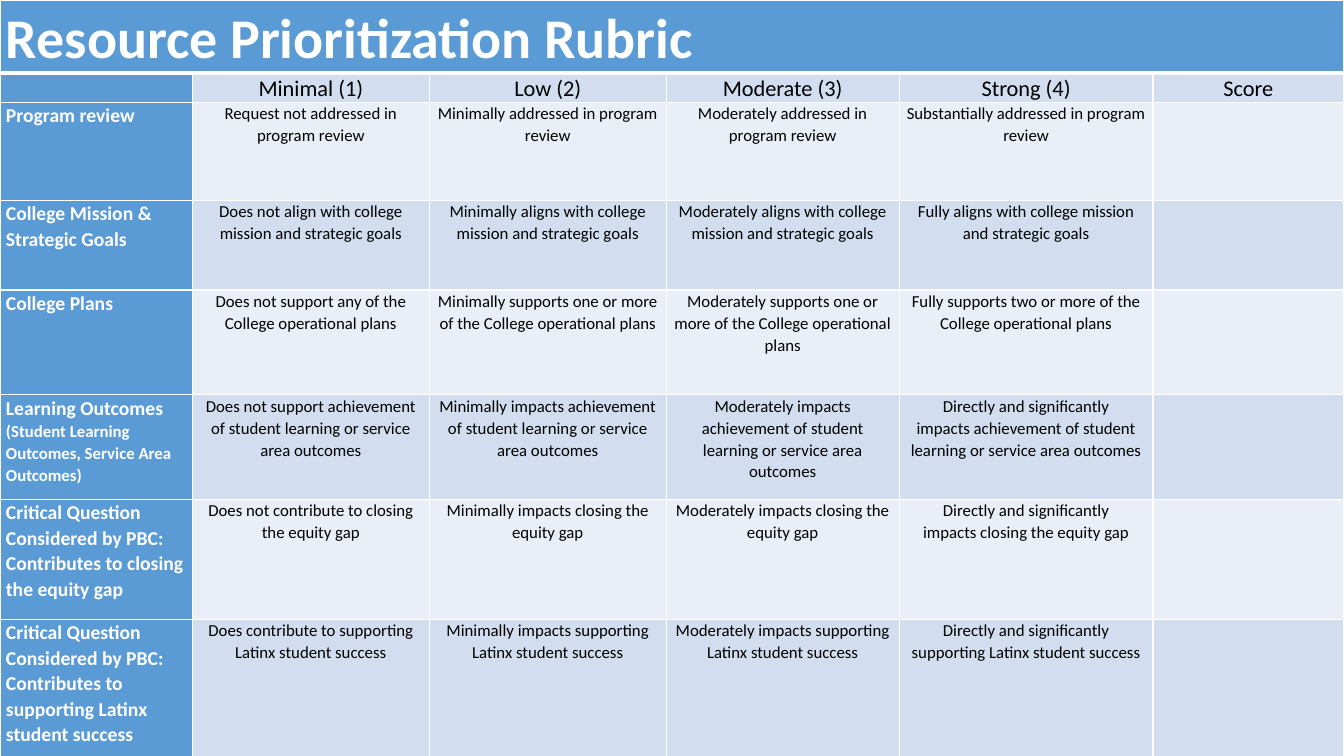
from dataclasses import dataclass

from pptx import Presentation
from pptx.dml.color import RGBColor as RGB
from pptx.enum.text import PP_ALIGN as Align
from pptx.oxml import parse_xml
from pptx.oxml.ns import nsdecls
from pptx.util import Cm, Pt


@dataclass(frozen=True)
class Theme:
    """Colours and type sizes of the rubric."""
    font: str = "Calibri"
    blue: str = "5B9BD5"
    pale: str = "EAEFF7"
    mid: str = "D2DEEF"
    white: str = "FFFFFF"
    black: str = "000000"
    title: int = 40
    head: int = 16
    label: int = 14
    body: int = 12


THEME = Theme()
WIDTHS = (4.85, 5.97, 5.97, 5.87, 6.4, 4.8)
HEIGHTS = (1.83, 0.74, 2.47, 2.26, 2.64, 2.64, 3.02, 3.99)
TITLE = "Resource Prioritization Rubric"
HEADS = ("", "Minimal (1)", "Low (2)", "Moderate (3)", "Strong (4)", "Score")
ROWS = (
    ("Program review",
     "Request not addressed in program review",
     "Minimally addressed in program review",
     "Moderately addressed in program review",
     "Substantially addressed in program review", ""),
    ("College Mission & Strategic Goals",
     "Does not align with college mission and strategic goals",
     "Minimally aligns with college mission and strategic goals",
     "Moderately aligns with college mission and strategic goals",
     "Fully aligns with college mission and strategic goals", ""),
    ("College Plans",
     "Does not support any of the College operational plans",
     "Minimally supports one or more of the College operational plans",
     "Moderately supports one or\nmore of the College operational plans",
     "Fully supports two or more of the College operational plans", ""),
    ("Learning Outcomes",
     "Does not support achievement of student learning or service area outcomes",
     "Minimally impacts achievement of student learning or service area outcomes",
     "Moderately impacts achievement of student learning or service area outcomes",
     "Directly and significantly\nimpacts achievement of student "
     "learning or service area outcomes", ""),
    ("Critical Question Considered by PBC: Contributes to closing the equity gap",
     "Does not contribute to closing the equity gap",
     "Minimally impacts closing the equity gap",
     "Moderately impacts closing the equity gap",
     "Directly and significantly\nimpacts closing the equity gap", ""),
    ("Critical Question Considered by PBC: "
     "Contributes to supporting Latinx student success",
     "Does contribute to supporting Latinx student success",
     "Minimally impacts supporting Latinx student success",
     "Moderately impacts supporting Latinx student success",
     "Directly and significantly\nsupporting Latinx student success", ""),
)
NOTES = {"Learning Outcomes": " (Student Learning Outcomes, Service Area Outcomes)"}


def edge(cell, base=1):
    """Draw white cell borders, with the bottom one in its own width."""
    props = cell._tc.get_or_add_tcPr()
    for side, width in zip("LRTB", (1, 1, 1, base)):
        props.append(parse_xml(
            f'<a:ln{side} {nsdecls("a")} w="{Pt(width)}"><a:solidFill>'
            f'<a:srgbClr val="{THEME.white}"/></a:solidFill></a:ln{side}>'))


def paint(cell, fill, base=1):
    """Give a cell its borders, fill and margins."""
    edge(cell, base)
    cell.fill.solid()
    cell.fill.fore_color.rgb = RGB.from_string(fill)
    cell.margin_left = cell.margin_right = Cm(0.15)
    cell.margin_top = cell.margin_bottom = 0


def write(cell, text, size, color, bold=False, align=Align.LEFT):
    """Set the text of a cell and its small note, if it has one."""
    para = cell.text_frame.paragraphs[0]
    para.text = text
    para.alignment = align
    para.line_spacing = 1.07
    font = para.font
    font.name, font.size, font.bold = THEME.font, Pt(size), bold
    font.color.rgb = RGB.from_string(color)
    if text in NOTES:
        note = para.add_run()
        note.text = NOTES[text]
        note.font.size = Pt(THEME.body)


def grid(slide):
    """Add the plain table with its column widths and row heights."""
    frame = slide.shapes.add_table(
        len(HEIGHTS), len(WIDTHS), 0, 0, Cm(sum(WIDTHS)), Cm(sum(HEIGHTS)))
    table = frame.table
    table.first_row = table.horz_banding = False
    for col, width in zip(table.columns, WIDTHS):
        col.width = Cm(width)
    for row, height in zip(table.rows, HEIGHTS):
        row.height = Cm(height)
    return table


def banner(table):
    """Fill the merged title row."""
    for cell in table.rows[0].cells:
        paint(cell, THEME.blue, 3)
    first = table.cell(0, 0)
    first.merge(table.cell(0, len(WIDTHS) - 1))
    write(first, TITLE, THEME.title, THEME.white, True)


def line(row, texts, fill, size):
    """Fill one rubric row: a blue label, then centred cells."""
    label, *rest = row.cells
    paint(label, THEME.blue)
    write(label, texts[0], THEME.label, THEME.white, True)
    for cell, text in zip(rest, texts[1:]):
        paint(cell, fill)
        write(cell, text, size, THEME.black, align=Align.CENTER)


def main():
    """Build the rubric slide and save it."""
    deck = Presentation()
    deck.slide_width, deck.slide_height = Cm(33.87), Cm(19.05)
    slide = deck.slides.add_slide(deck.slide_layouts[6])
    table = grid(slide)
    banner(table)
    line(table.rows[1], HEADS, THEME.mid, THEME.head)
    for num, texts in enumerate(ROWS):
        fill = THEME.mid if num % 2 else THEME.pale
        line(table.rows[num + 2], texts, fill, THEME.body)
    deck.save("out.pptx")


if __name__ == "__main__":
    main()
